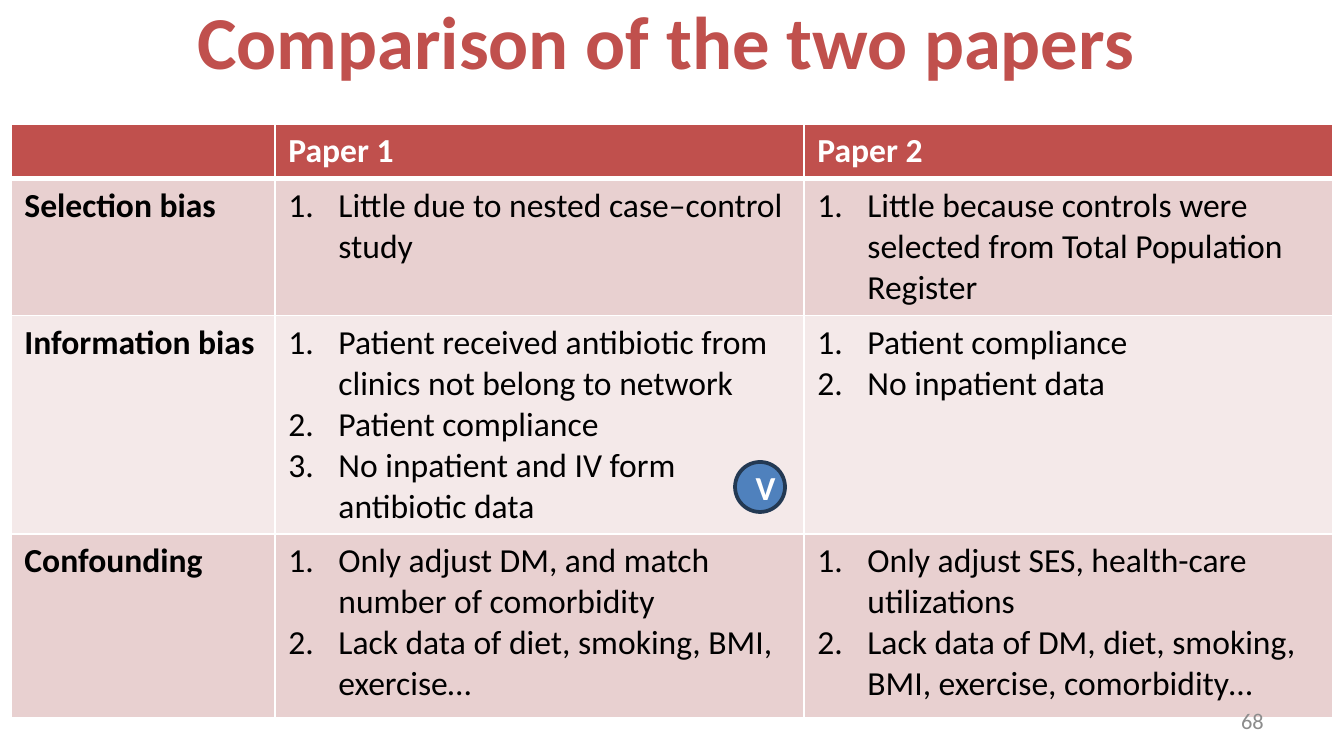
from dataclasses import dataclass
from lxml.etree import SubElement
from pptx import Presentation
from pptx.dml.color import RGBColor
from pptx.enum.shapes import MSO_SHAPE
from pptx.enum.text import MSO_ANCHOR, PP_ALIGN
from pptx.oxml import parse_xml
from pptx.oxml.ns import nsdecls, qn
from pptx.util import Emu, Pt

SCALE = 914400 / 134.4


@dataclass(frozen=True)
class Theme:
    font: str = "Calibri"
    red: str = "C0504D"
    dark: str = "E8D0D0"
    light: str = "F4E9E9"
    blue: str = "4F81BD"
    navy: str = "233953"
    gray: str = "8C8C8C"
    white: str = "FFFFFF"
    black: str = "000000"
    title: int = 40
    body: int = 18
    small: int = 12


THEME = Theme()
COLS = [264, 529, 529]
ROWS = [54, 137, 218, 184]
INDENT = 50
HEADS = ["", "Paper 1", "Paper 2"]
BIASES = [
    ("Selection bias",
     ["Little due to nested case–control study"],
     ["Little because controls were selected from Total Population Register"]),
    ("Information bias",
     ["Patient received antibiotic from clinics not belong to network",
      "Patient compliance",
      "No inpatient and IV form antibiotic data"],
     ["Patient compliance", "No inpatient data"]),
    ("Confounding",
     ["Only adjust DM, and match number of comorbidity",
      "Lack data of diet, smoking, BMI, exercise…"],
     ["Only adjust SES, health-care utilizations",
      "Lack data of DM, diet, smoking, BMI, exercise, comorbidity…"]),
]


def px(num):
    return Emu(round(num * SCALE))


def rgb(code):
    return RGBColor.from_string(code)


def style(para, size, color, bold=False):
    for run in para.runs:
        font = run.font
        font.name, font.size, font.bold = THEME.font, Pt(size), bold
        font.color.rgb = rgb(color)


def number(para):
    props = para._p.get_or_add_pPr()
    props.set("marL", str(px(INDENT)))
    props.set("indent", str(px(-INDENT)))
    SubElement(props, qn("a:buAutoNum"), type="arabicPeriod")


def border(cell, base):
    props = cell._tc.get_or_add_tcPr()
    for spot, (side, width) in enumerate([("L", 1), ("R", 1), ("T", 1), ("B", base)]):
        props.insert(spot, parse_xml(
            f'<a:ln{side} {nsdecls("a")} w="{Pt(width)}"><a:solidFill>'
            f'<a:srgbClr val="{THEME.white}"/></a:solidFill></a:ln{side}>'))


def fill_cell(cell, lines, fill, color, bold, listed, base=1):
    cell.fill.solid()
    cell.fill.fore_color.rgb = rgb(fill)
    border(cell, base)
    frame = cell.text_frame
    frame.text = "\n".join(lines)
    for para in frame.paragraphs:
        style(para, THEME.body, color, bold)
        if listed:
            number(para)


def add_grid(slide):
    grid = slide.shapes.add_table(
        len(ROWS), len(COLS), px(11), px(124), px(sum(COLS)), px(sum(ROWS))).table
    for col, width in zip(grid.columns, COLS):
        col.width = px(width)
    for row, height in zip(grid.rows, ROWS):
        row.height = px(height)
    for col, head in enumerate(HEADS):
        fill_cell(grid.cell(0, col), [head], THEME.red, THEME.white, True, False, 3)
    for row, (name, *lists) in enumerate(BIASES, 1):
        fill = THEME.dark if row % 2 else THEME.light
        fill_cell(grid.cell(row, 0), [name], fill, THEME.black, True, False)
        for col, lines in enumerate(lists, 1):
            fill_cell(grid.cell(row, col), lines, fill, THEME.black, False, True)


def add_text(slide, box, text, size, color, bold=False, align=None, wrap=True):
    frame = slide.shapes.add_textbox(*map(px, box)).text_frame
    frame.word_wrap = wrap
    frame.text = text
    para = frame.paragraphs[0]
    para.alignment = align
    style(para, size, color, bold)
    return frame


def add_badge(slide, box, text):
    badge = slide.shapes.add_shape(MSO_SHAPE.OVAL, *map(px, box))
    badge.shadow.inherit = False
    badge.fill.solid()
    badge.fill.fore_color.rgb = rgb(THEME.blue)
    badge.line.color.rgb = rgb(THEME.navy)
    badge.line.width = Pt(2)
    frame = badge.text_frame
    frame.text = text
    frame.vertical_anchor = MSO_ANCHOR.MIDDLE
    para = frame.paragraphs[0]
    para.alignment = PP_ALIGN.CENTER
    style(para, THEME.body, THEME.white, True)


def main():
    deck = Presentation()
    deck.slide_width, deck.slide_height = px(1344), px(756)
    slide = deck.slides.add_slide(deck.slide_layouts[6])
    add_grid(slide)
    add_text(slide, (184, -12, 974, 103), "Comparison of the two papers",
             THEME.title, THEME.red, bold=True, wrap=False)
    add_badge(slide, (735, 462, 50, 50), "V")
    page = add_text(slide, (963, 701, 314, 40), "68",
                    THEME.small, THEME.gray, align=PP_ALIGN.RIGHT)
    page.vertical_anchor = MSO_ANCHOR.MIDDLE
    deck.save("out.pptx")


if __name__ == "__main__":
    main()
